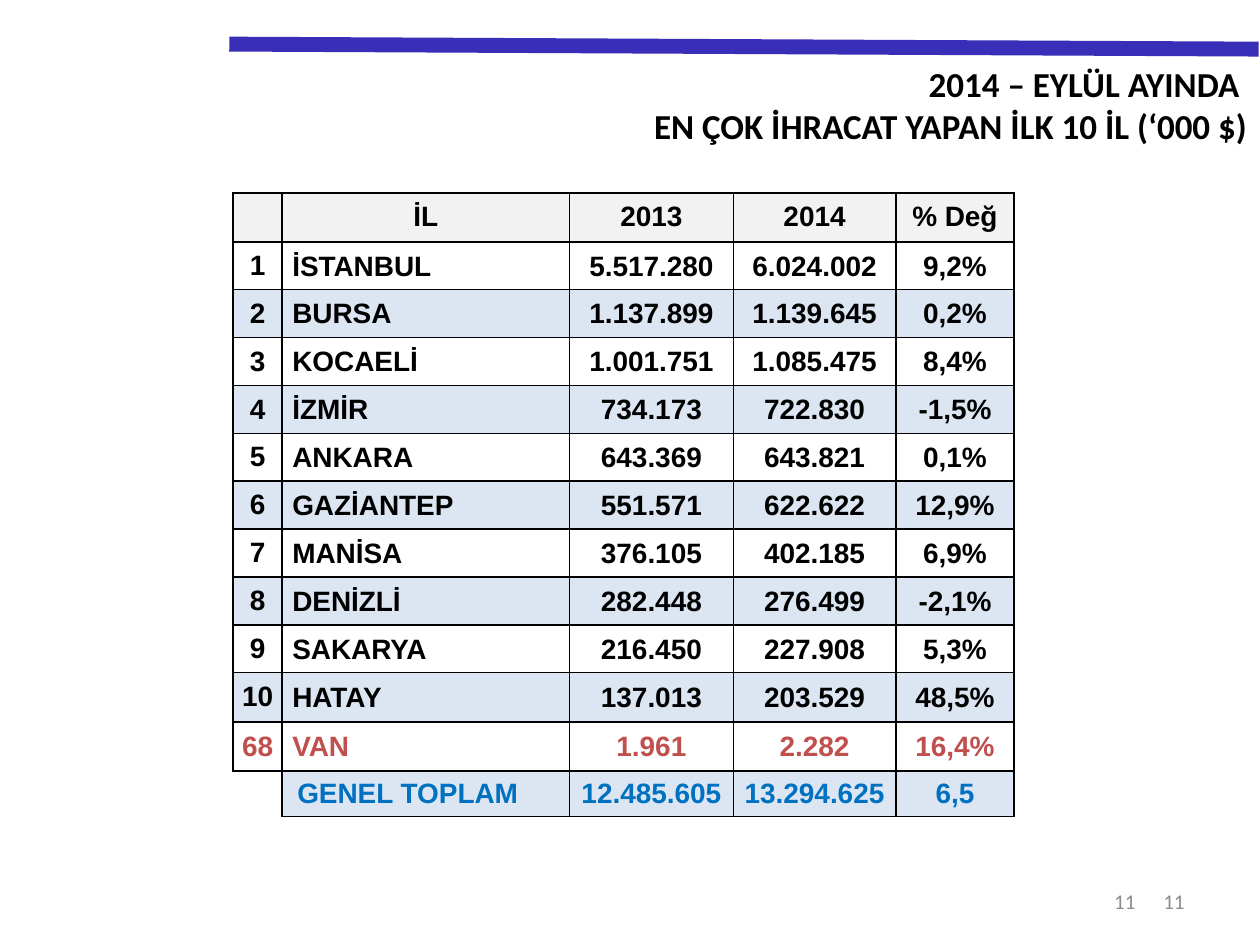
import pptx
import pptx.util
import pptx.dml.color
import pptx.enum.shapes
import pptx.enum.text
import pptx.oxml.ns
import lxml.etree

Inches = pptx.util.Inches
Pt = pptx.util.Pt
RGBColor = pptx.dml.color.RGBColor
Align = pptx.enum.text.PP_ALIGN
Anchor = pptx.enum.text.MSO_ANCHOR
qn = pptx.oxml.ns.qn

BLACK = RGBColor(0x00, 0x00, 0x00)
WHITE = RGBColor(0xFF, 0xFF, 0xFF)
GRAY = RGBColor(0x8C, 0x8C, 0x8C)
PALE = RGBColor(0xF2, 0xF2, 0xF2)
BAND = RGBColor(0xDC, 0xE6, 0xF2)
RED = RGBColor(0xC0, 0x50, 0x4D)
BLUE = RGBColor(0x00, 0x70, 0xC0)
INDIGO = RGBColor(0x38, 0x2E, 0xB8)

WIDTHS = [0.39, 2.28, 1.3, 1.29, 0.94]
HEIGHTS = [0.39] + [0.38] * 9 + [0.39, 0.39, 0.36]
ROWS = [
    ("", "İL", "2013", "2014", "% Değ"),
    ("1", "İSTANBUL", "5.517.280", "6.024.002", "9,2%"),
    ("2", "BURSA", "1.137.899", "1.139.645", "0,2%"),
    ("3", "KOCAELİ", "1.001.751", "1.085.475", "8,4%"),
    ("4", "İZMİR", "734.173", "722.830", "-1,5%"),
    ("5", "ANKARA", "643.369", "643.821", "0,1%"),
    ("6", "GAZİANTEP", "551.571", "622.622", "12,9%"),
    ("7", "MANİSA", "376.105", "402.185", "6,9%"),
    ("8", "DENİZLİ", "282.448", "276.499", "-2,1%"),
    ("9", "SAKARYA", "216.450", "227.908", "5,3%"),
    ("10", "HATAY", "137.013", "203.529", "48,5%"),
    ("68", "VAN", "1.961", "2.282", "16,4%"),
    ("", "GENEL TOPLAM", "12.485.605", "13.294.625", "6,5"),
]
TOTAL = len(ROWS) - 1


def add_run(para, text, size, face, color, bold):
    run = para.add_run()
    run.text = text
    font = run.font
    font.size, font.name, font.bold = Pt(size), face, bold
    font.color.rgb = color


def add_text(slide, box, lines, size, color, bold, anchor):
    frame = slide.shapes.add_textbox(*map(Inches, box)).text_frame
    frame.word_wrap = True
    frame.vertical_anchor = anchor
    for num, line in enumerate(lines):
        para = frame.add_paragraph() if num else frame.paragraphs[0]
        para.alignment = Align.RIGHT
        add_run(para, line, size, "Calibri", color, bold)


def add_rule(slide, box):
    left, top, width, height = box
    line = slide.shapes.add_connector(
        pptx.enum.shapes.MSO_CONNECTOR.STRAIGHT,
        Inches(left), Inches(top), Inches(left + width), Inches(top + height))
    line.line.color.rgb = INDIGO
    line.line.width = Pt(8.5)
    props = line._element.spPr
    lxml.etree.SubElement(props, qn("a:effectLst"))


def add_edges(cell, sides):
    props = cell._tc.get_or_add_tcPr()
    for side in "LRTB":
        edge = lxml.etree.SubElement(props, qn("a:ln" + side), w=str(Pt(1)))
        if side in sides:
            fill = lxml.etree.SubElement(edge, qn("a:solidFill"))
            lxml.etree.SubElement(fill, qn("a:srgbClr"), val=str(BLACK))
        else:
            lxml.etree.SubElement(edge, qn("a:noFill"))


def get_pads(row, col):
    if row == 0 and col:
        return 0.1, 0.05, 0.1, 0.05
    if col == 0:
        return 0, 0, 0, 0
    left = 0.01 if col > 1 else 0.12 if row == TOTAL else 0.08
    return left, 0.01, 0.01, 0


def fill_cell(cell, row, col, text):
    blank = row == TOTAL and col == 0
    add_edges(cell, "TR" if blank else "LRTB")
    if blank:
        cell.fill.background()
    else:
        cell.fill.solid()
        cell.fill.fore_color.rgb = PALE if row == 0 else WHITE if row % 2 else BAND
    pads = map(Inches, get_pads(row, col))
    cell.margin_left, cell.margin_top, cell.margin_right, cell.margin_bottom = pads
    cell.vertical_anchor = Anchor.MIDDLE
    if text:
        para = cell.text_frame.paragraphs[0]
        para.alignment = Align.LEFT if row and col == 1 else Align.CENTER
        color = {TOTAL - 1: RED, TOTAL: BLUE}.get(row, BLACK)
        add_run(para, text, 16, "Arial", color, True)


def add_grid(slide, box):
    frame = slide.shapes.add_table(len(ROWS), len(WIDTHS), *map(Inches, box))
    table = frame.table
    table.first_row = table.horz_banding = False
    for col, width in zip(table.columns, WIDTHS):
        col.width = Inches(width)
    for line, height in zip(table.rows, HEIGHTS):
        line.height = Inches(height)
    for row, texts in enumerate(ROWS):
        for col, text in enumerate(texts):
            fill_cell(table.cell(row, col), row, col, text)


def add_title(slide, box):
    lines = ["2014 – EYLÜL AYINDA ", "EN ÇOK İHRACAT YAPAN İLK 10 İL (‘000 $)"]
    add_text(slide, box, lines, 20, BLACK, True, Anchor.TOP)


def add_number(slide, box):
    add_text(slide, box, ["11"], 12, GRAY, False, Anchor.MIDDLE)


def main():
    deck = pptx.Presentation()
    deck.slide_width, deck.slide_height = Inches(10), Inches(7.5)
    slide = deck.slides.add_slide(deck.slide_layouts[6])
    add_number(slide, (7.17, 6.95, 2.33, 0.4))
    add_rule(slide, (1.82, 0.35, 8.17, 0.04))
    add_number(slide, (7.01, 6.95, 2.1, 0.4))
    add_title(slide, (1.06, 0.45, 8.94, 0.77))
    add_grid(slide, (1.85, 1.53, 6.2, 4.99))
    deck.save("out.pptx")


if __name__ == "__main__":
    main()
